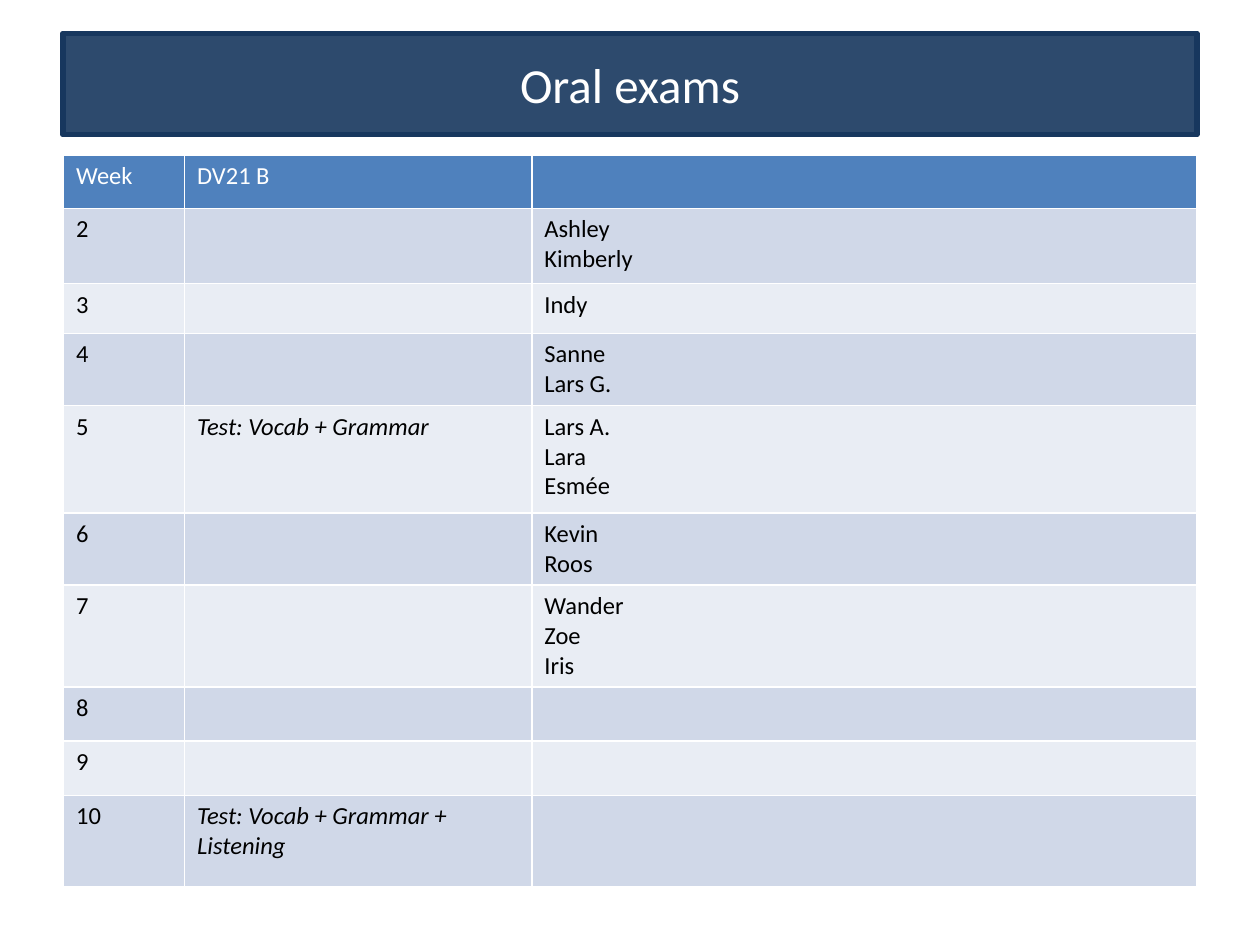
import pptx
import pptx.dml.color
import pptx.enum.shapes
import pptx.enum.text
import pptx.oxml.ns
import pptx.util
from lxml import etree
from pptx.util import Cm

RGBColor = pptx.dml.color.RGBColor
NAVY = RGBColor(0x17, 0x37, 0x5E)
HEADER_BLUE = RGBColor(0x4F, 0x81, 0xBD)
BAND_DARK = RGBColor(0xD0, 0xD8, 0xE8)
BAND_LIGHT = RGBColor(0xE9, 0xED, 0xF4)
WHITE = RGBColor(0xFF, 0xFF, 0xFF)
BLACK = RGBColor(0x00, 0x00, 0x00)

FONT = "Calibri"
TABLE_TEXT_SIZE = 14
COLUMN_WIDTHS = (2.44, 7.0, 13.4)

# Row height in cm, week, test, students
SCHEDULE = [
    (1.08, "Week", "DV21 B", ""),
    (1.52, "2", "", "Ashley\nKimberly"),
    (1.0, "3", "", "Indy"),
    (1.4, "4", "", "Sanne\nLars G."),
    (2.16, "5", "Test: Vocab + Grammar", "Lars A.\nLara\nEsmée"),
    (1.4, "6", "", "Kevin\nRoos"),
    (1.96, "7", "", "Wander\nZoe\nIris"),
    (1.09, "8", "", ""),
    (1.09, "9", "", ""),
    (1.85, "10", "Test: Vocab + Grammar + Listening", ""),
]


def format_run(run, size, color, italic=False):
    run.font.name = FONT
    run.font.size = pptx.util.Pt(size)
    run.font.color.rgb = color
    run.font.italic = italic


def add_title(slide, left, top, width, height):
    shape = slide.shapes.add_shape(
        pptx.enum.shapes.MSO_SHAPE.RECTANGLE, left, top, width, height)
    shape.shadow.inherit = False
    shape.fill.solid()
    shape.fill.fore_color.rgb = NAVY
    # Slightly transparent fill
    color = shape.fill._xPr.find(".//" + pptx.oxml.ns.qn("a:srgbClr"))
    etree.SubElement(color, pptx.oxml.ns.qn("a:alpha"), val="90000")
    shape.line.color.rgb = NAVY
    shape.line.width = pptx.util.Pt(3)

    text_frame = shape.text_frame
    text_frame.text = "Oral exams"
    text_frame.vertical_anchor = pptx.enum.text.MSO_ANCHOR.MIDDLE
    paragraph = text_frame.paragraphs[0]
    paragraph.alignment = pptx.enum.text.PP_ALIGN.CENTER
    format_run(paragraph.runs[0], 28, WHITE)


def fill_cell(cell, text, fill, color, italic):
    cell.fill.solid()
    cell.fill.fore_color.rgb = fill
    cell.text_frame.text = text
    for paragraph in cell.text_frame.paragraphs:
        for run in paragraph.runs:
            format_run(run, TABLE_TEXT_SIZE, color, italic)
        if not paragraph.runs:
            # Keeps empty cells from stretching their row
            end = paragraph._p.get_or_add_endParaRPr()
            end.set("sz", str(TABLE_TEXT_SIZE * 100))


def add_schedule(slide, left, top, width, height):
    # The default table style supplies the white cell borders
    table = slide.shapes.add_table(
        len(SCHEDULE), len(COLUMN_WIDTHS), left, top, width, height).table
    for column, column_width in zip(table.columns, COLUMN_WIDTHS):
        column.width = Cm(column_width)

    for row_index, (row_height, *texts) in enumerate(SCHEDULE):
        table.rows[row_index].height = Cm(row_height)
        is_header = row_index == 0
        band = BAND_DARK if row_index % 2 else BAND_LIGHT
        fill = HEADER_BLUE if is_header else band
        color = WHITE if is_header else BLACK
        for column_index, text in enumerate(texts):
            italic = column_index == 1 and not is_header
            fill_cell(table.cell(row_index, column_index),
                      text, fill, color, italic)


def main():
    presentation = pptx.Presentation()
    presentation.slide_width = Cm(25.4)
    presentation.slide_height = Cm(19.05)
    slide = presentation.slides.add_slide(presentation.slide_layouts[6])
    add_title(slide, Cm(1.27), Cm(0.67), Cm(22.86), Cm(2.05))
    add_schedule(slide, Cm(1.28), Cm(3.12),
                 Cm(sum(COLUMN_WIDTHS)), Cm(sum(row[0] for row in SCHEDULE)))
    presentation.save("out.pptx")


if __name__ == "__main__":
    main()
